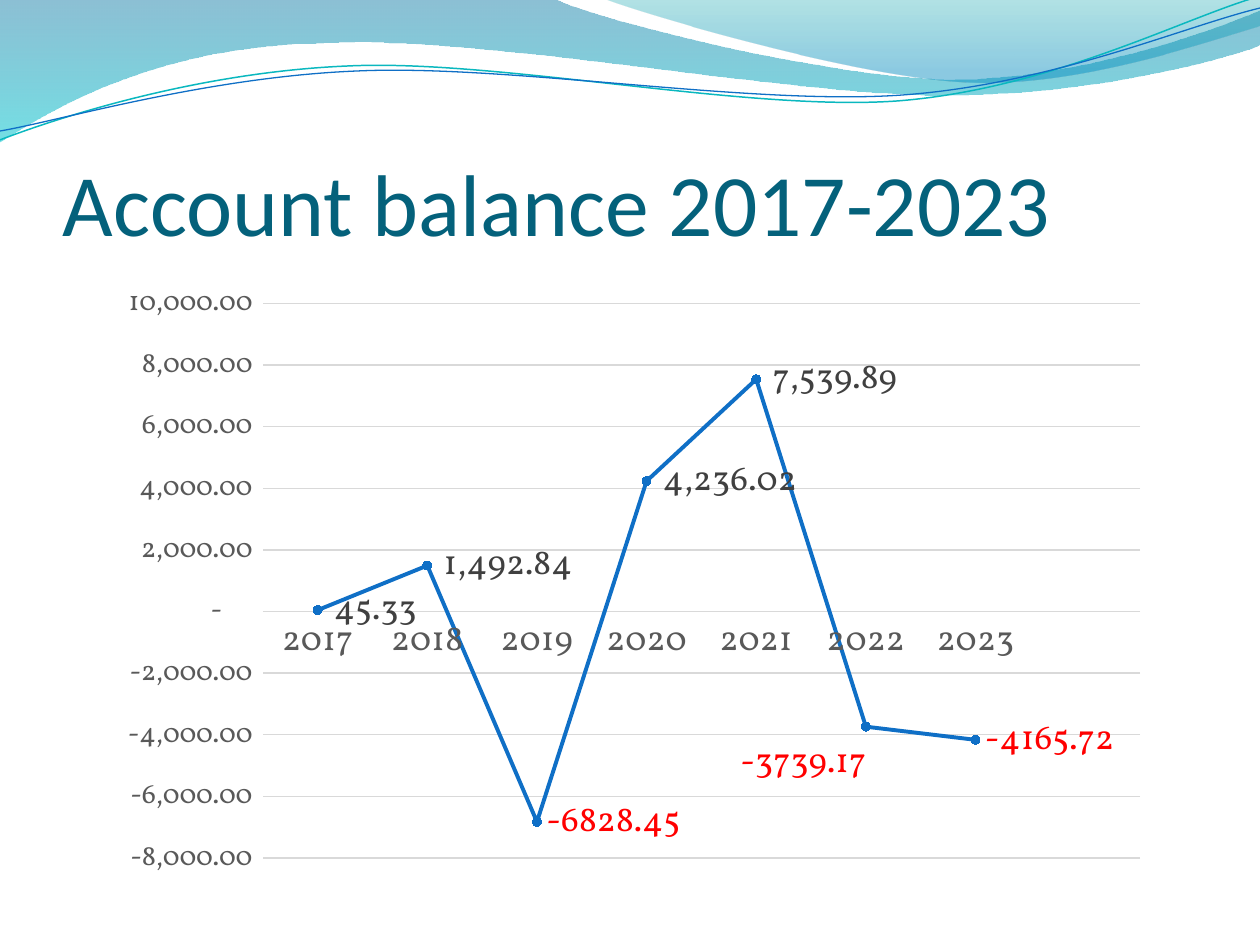
from math import cos, radians, sin

from lxml import etree
from pptx import Presentation
from pptx.chart.data import CategoryChartData
from pptx.dml.color import RGBColor
from pptx.enum.chart import XL_CHART_TYPE, XL_LABEL_POSITION, XL_MARKER_STYLE, XL_TICK_MARK
from pptx.enum.text import MSO_ANCHOR
from pptx.oxml import parse_xml
from pptx.oxml.ns import nsdecls, qn
from pptx.util import Pt

PX = 914400 / 126
LINE_MARKERS = XL_CHART_TYPE.LINE_MARKERS
LABEL_RIGHT = XL_LABEL_POSITION.RIGHT
CIRCLE = XL_MARKER_STYLE.CIRCLE
NO_TICK = XL_TICK_MARK.NONE
BOTTOM = MSO_ANCHOR.BOTTOM

BLUE = RGBColor(0x0F, 0x6F, 0xC6)
TEAL = RGBColor(0x0A, 0xB8, 0xBF)
DEEP_BLUE = RGBColor(0x00, 0x74, 0xA1)
AQUA = RGBColor(0x00, 0xC6, 0xCF)
SEA = RGBColor(0x00, 0xA1, 0xA9)
SKY = RGBColor(0x00, 0x8B, 0xBF)
TITLE_COLOR = RGBColor(0x04, 0x61, 0x7B)
BLACK = RGBColor(0, 0, 0)
AXIS_TEXT = RGBColor(0x59, 0x59, 0x59)
LABEL_TEXT = RGBColor(0x40, 0x40, 0x40)
GRID = RGBColor(0xD9, 0xD9, 0xD9)
RED = RGBColor(0xFF, 0, 0)

NUMBER_FORMAT = '_-* #,##0.00_-;\\-* #,##0.00_-;_-* "-"??_-;_-@_-'
TILT = -2.7


def px(length):
    return round(length * PX)


def turn(point, center, degrees):
    x, y = point[0] - center[0], point[1] - center[1]
    c, s = cos(radians(degrees)), sin(radians(degrees))
    return center[0] + x * c - y * s, center[1] + x * s + y * c


def add_layout(parent, index, **values):
    """Place a chart part by hand, in fractions of the chart."""
    for old in parent.findall(qn("c:layout")):
        parent.remove(old)
    parts = "".join(f'<c:{name} val="{value}"/>' for name, value in values.items())
    parent.insert(index, parse_xml(
        f'<c:layout {nsdecls("c")}><c:manualLayout>{parts}</c:manualLayout></c:layout>'))


class SlideBuilder:
    title_font = "Calibri"
    chart_font = "Vollkorn"

    def __init__(self, slide):
        self.slide = slide

    def style(self, font, name, size, color):
        font.name, font.size, font.color.rgb = name, Pt(size), color

    def outline(self, start, segments, close, center=(0, 0), tilt=0):
        """Segments hold 2 numbers for a straight line and 6 for a cubic curve."""
        flat = [start] + [segment[i:i + 2] for segment in segments
                          for i in range(0, len(segment), 2)]
        points = [tuple(map(px, turn(point, center, -tilt))) for point in flat]
        builder = self.slide.shapes.build_freeform(*points[0], scale=1)
        builder.add_line_segments(points[1:], close=close)
        shape = builder.convert_to_shape()
        shape.shadow.inherit = False
        shape.rotation = tilt
        # Join each three control points into one curve
        steps = iter(list(shape._element.spPr.iter(qn("a:lnTo"))))
        for segment in segments:
            step = next(steps)
            if len(segment) == 6:
                step.addprevious(curve := etree.Element(qn("a:cubicBezTo")))
                for control in (step, next(steps), next(steps)):
                    curve.append(control[0])
                    control.getparent().remove(control)
        return shape

    def wave(self, start, segments, stops):
        shape = self.outline(start, segments, True)
        shape.line.fill.background()
        shape.fill.gradient()
        shape.fill.gradient_angle = 270
        for stop, (position, color, _) in zip(shape.fill.gradient_stops, stops):
            stop.position = position
            stop.color.rgb = color
        for element, (_, _, opacity) in zip(shape._element.spPr.iter(qn("a:srgbClr")), stops):
            etree.SubElement(element, qn("a:alpha")).set("val", str(opacity * 1000))

    def curve(self, start, segments, center, color, width):
        shape = self.outline(start, segments, False, center, TILT)
        shape.fill.background()
        shape.line.color.rgb = color
        shape.line.width = Pt(width)

    def title(self, text, left, top, width, height):
        box = self.slide.shapes.add_textbox(px(left), px(top), px(width), px(height))
        frame = box.text_frame
        frame.word_wrap = True
        frame.vertical_anchor = BOTTOM
        frame.margin_left = frame.margin_right = frame.margin_bottom = 0
        frame.margin_top = px(6)
        para = frame.paragraphs[0]
        para.text = text
        self.style(para.font, self.title_font, 50, TITLE_COLOR)

    def line_chart(self, categories, values, left, top, width, height):
        data = CategoryChartData(number_format=NUMBER_FORMAT)
        data.categories = categories
        data.add_series("Series 1", values)
        chart = self.slide.shapes.add_chart(
            LINE_MARKERS, px(left), px(top), px(width), px(height), data).chart
        chart.has_legend = chart.has_title = False
        self.style(chart.font, self.chart_font, 10, BLACK)
        add_layout(chart._chartSpace.chart.plotArea, 0, layoutTarget="inner",
                   xMode="edge", yMode="edge", x=0.159, y=0.034, w=0.826, h=0.915)
        self.axes(chart)
        self.series(chart.plots[0])

    def axes(self, chart):
        years, amounts = chart.category_axis, chart.value_axis
        for axis, size in ((years, 20), (amounts, 16)):
            axis.major_tick_mark = axis.minor_tick_mark = NO_TICK
            self.style(axis.tick_labels.font, self.chart_font, size, AXIS_TEXT)
        amounts.minimum_scale, amounts.maximum_scale, amounts.major_unit = -8000, 10000, 2000
        amounts.tick_labels.number_format = NUMBER_FORMAT
        amounts.tick_labels.number_format_is_linked = False
        amounts.format.line.fill.background()
        amounts.has_major_gridlines = True
        for line in (years.format.line, amounts.major_gridlines.format.line):
            line.color.rgb = GRID
            line.width = Pt(0.75)

    def series(self, plot):
        plot.vary_by_categories = False
        series = plot.series[0]
        series.smooth = False
        series.format.line.color.rgb = BLUE
        series.format.line.width = Pt(2.25)
        marker = series.marker
        marker.style, marker.size = CIRCLE, 5
        marker.format.fill.solid()
        marker.format.fill.fore_color.rgb = BLUE
        marker.format.line.color.rgb = BLUE
        labels = series.data_labels
        labels.show_value = True
        labels.position = LABEL_RIGHT
        labels.number_format = NUMBER_FORMAT
        labels.number_format_is_linked = False
        self.style(labels.font, self.chart_font, 20, LABEL_TEXT)
        # Negative balances stand out in red
        for index, value in enumerate(series.values):
            if value is not None and value < 0:
                label = series.points[index].data_label
                span = label.text_frame.paragraphs[0].add_run()
                span.text = f"{value:.2f}"
                self.style(span.font, self.chart_font, 20, RED)
                label.position = LABEL_RIGHT
                if index == 5:
                    add_layout(label._dLbl, 1, x=-0.127, y=0.06)


def main():
    deck = Presentation()
    deck.slide_width, deck.slide_height = px(1260), px(945)
    page = SlideBuilder(deck.slides.add_slide(deck.slide_layouts[6]))

    # Waves along the top
    page.wave((0, 0), [
        (554, -1), (600, 21, 837, 79, 955, 79), (1075, 79, 1207, 33, 1260, 11),
        (1261, 45), (1239, 55, 1096, 96, 940, 95), (784, 95, 481, 35, 324, 43),
        (163, 45, 58, 105, -1, 142), (0, 0)],
        [(0, DEEP_BLUE, 45), (1, AQUA, 55)])
    page.wave((604, -1), [
        (641, 14, 859, 78, 969, 82), (1079, 87, 1211, 40, 1260, 26),
        (1260, 0), (604, -1)],
        [(0, SEA, 30), (0.8, SKY, 45)])
    page.curve((0, 140), [
        (60, 117, 199, 72, 349, 66), (498, 59, 747, 112, 898, 101),
        (1050, 89, 1182, 19, 1257, -3)], (629, 72), TEAL, 0.85)
    page.curve((0, 131), [
        (59, 121, 207, 77, 357, 71), (508, 64, 752, 106, 903, 95),
        (1053, 84, 1185, 26, 1260, 8)], (629, 74), BLUE, 0.75)

    # Title and yearly balance
    page.title("Account balance 2017-2023", 63, 97, 1134, 157)
    years = [str(year) for year in range(2017, 2024)]
    balances = [45.33, 1492.84, -6828.45, 4236.02, 7539.89, -3739.17, -4165.72]
    page.line_chart(years + [""], balances + [None], 94, 283, 1062, 606)

    deck.save("out.pptx")


if __name__ == "__main__":
    main()
